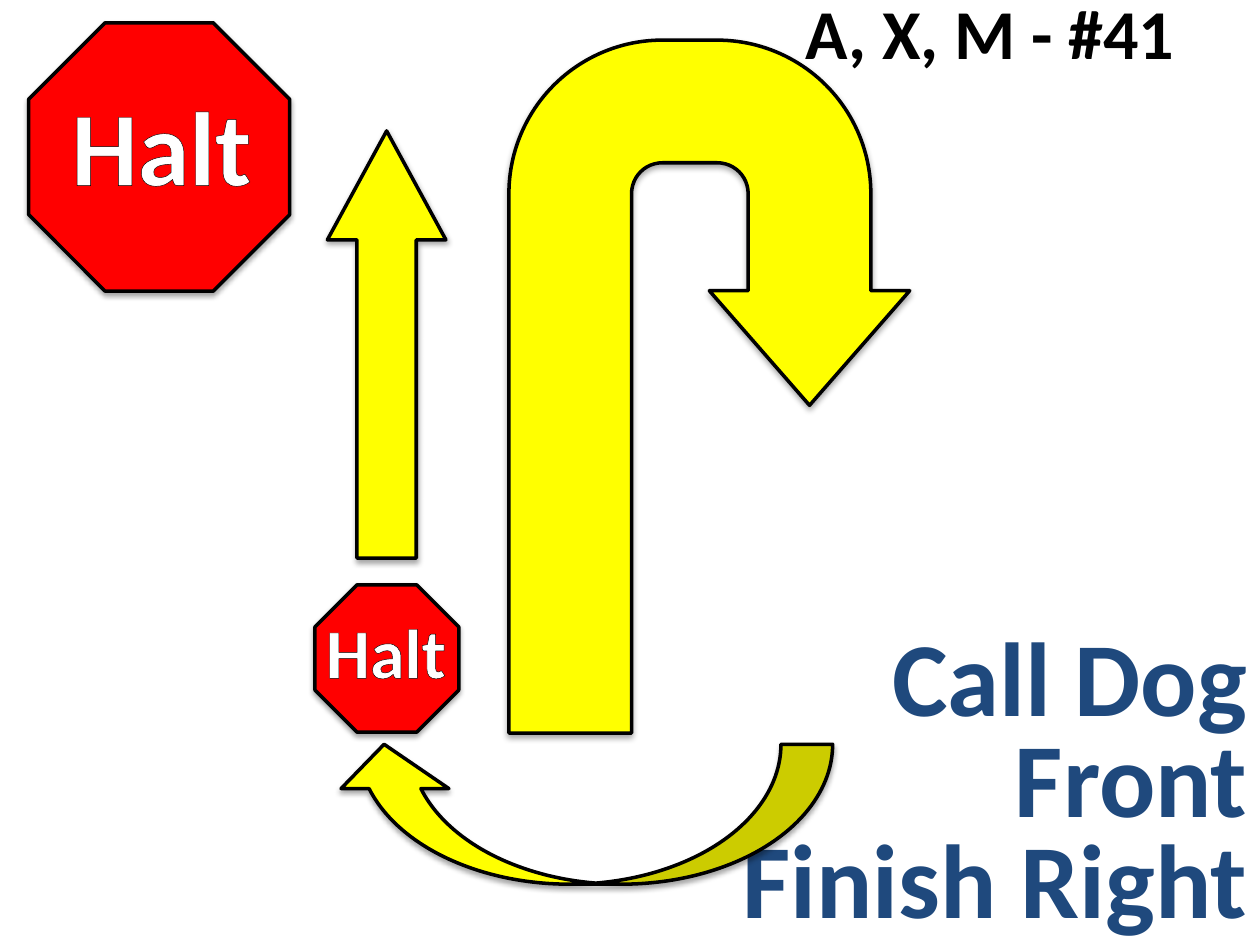
from dataclasses import dataclass

from lxml import etree
from pptx import Presentation
from pptx.dml.color import RGBColor
from pptx.enum.shapes import MSO_SHAPE
from pptx.enum.text import MSO_ANCHOR, MSO_AUTO_SIZE, PP_ALIGN
from pptx.oxml.ns import qn
from pptx.util import Cm, Pt

OCTAGON = MSO_SHAPE.OCTAGON
UP_ARROW = MSO_SHAPE.UP_ARROW
U_TURN_ARROW = MSO_SHAPE.U_TURN_ARROW
CURVED_LEFT_ARROW = MSO_SHAPE.CURVED_LEFT_ARROW
LEFT, RIGHT = PP_ALIGN.LEFT, PP_ALIGN.RIGHT
TOP = MSO_ANCHOR.TOP
GROW = MSO_AUTO_SIZE.SHAPE_TO_FIT_TEXT


@dataclass(frozen=True)
class Theme:
    font: str = "Calibri"
    large: int = 60
    small: int = 40
    black: str = "000000"
    white: str = "FFFFFF"
    yellow: str = "FFFF00"
    red: str = "FF0000"
    navy: str = "1F497D"
    line: float = 2
    text_line: float = 0.83


@dataclass(frozen=True)
class Box:
    left: float
    top: float
    width: float
    height: float

    def lengths(self) -> tuple:
        return Cm(self.left), Cm(self.top), Cm(self.width), Cm(self.height)


@dataclass(frozen=True)
class Arrow:
    kind: int
    box: Box
    adjustments: tuple
    rotation: float = 0


@dataclass(frozen=True)
class HaltSign:
    octagon: Box
    label: Box
    size: int


THEME = Theme()
TITLE_BOX = Box(14.5, 12.7, 10.9, 6.5)
TITLE_LINES = ("Call Dog", "Front", "Finish Right")
CLASS_BOX = Box(15.9, -0.33, 8.03, 1.96)
U_TURN = Arrow(U_TURN_ARROW, Box(10.26, 0.81, 8.08, 13.97), (0.306, 0.25, 0.286, 0.383, 0.527))
FORWARD = Arrow(UP_ARROW, Box(6.6, 2.64, 2.39, 8.61), (0.5, 0.919))
FINISH = Arrow(CURVED_LEFT_ARROW, Box(10.31, 11.35, 2.82, 10.13), (0.37, 0.771, 0.317), 90)
HALT_SIGNS = (
    HaltSign(Box(0.58, 0.46, 5.26, 5.41), Box(1.19, 1.5, 4.29, 2.82), THEME.large),
    HaltSign(Box(6.35, 11.79, 2.9, 2.97), Box(6.32, 12.14, 3.3, 1.96), THEME.small),
)


def add_color(parent, color: str):
    return etree.SubElement(parent, qn("a:srgbClr"), val=color)


def add_shadow(sp) -> None:
    sp.shadow.inherit = False
    effects = sp._element.spPr.find(qn("a:effectLst"))
    shadow = etree.SubElement(
        effects, qn("a:outerShdw"), blurRad=str(Pt(3.1)), dist=str(Pt(1.8)),
        dir="5400000", rotWithShape="0",
    )
    etree.SubElement(add_color(shadow, THEME.black), qn("a:alpha"), val="35000")


def add_figure(shapes, kind: int, box: Box, fill: str):
    sp = shapes.add_shape(kind, *box.lengths())
    sp.fill.solid()
    sp.fill.fore_color.rgb = RGBColor.from_string(fill)
    sp.line.color.rgb = RGBColor.from_string(THEME.black)
    sp.line.width = Pt(THEME.line)
    add_shadow(sp)
    return sp


def add_arrow(shapes, arrow: Arrow) -> None:
    sp = add_figure(shapes, arrow.kind, arrow.box, THEME.yellow)
    for i, value in enumerate(arrow.adjustments):
        sp.adjustments[i] = value
    sp.rotation = arrow.rotation


def write_text(sp, lines: tuple, size: int, color: str, align: int,
               outlined: bool = True, wrap: bool = True, spacing: float = 1.0) -> None:
    tf = sp.text_frame
    tf.word_wrap = wrap
    tf.auto_size = GROW
    tf.vertical_anchor = TOP
    for i, line in enumerate(lines):
        p = tf.add_paragraph() if i else tf.paragraphs[0]
        p.alignment = align
        p.line_spacing = spacing
        r = p.add_run()
        r.text = line
        r.font.name = THEME.font
        r.font.size = Pt(size)
        r.font.bold = True
        r.font.color.rgb = RGBColor.from_string(color)
        if outlined:
            ln = etree.Element(qn("a:ln"), w=str(Pt(THEME.text_line)))
            add_color(etree.SubElement(ln, qn("a:solidFill")), THEME.black)
            r.font._element.insert(0, ln)


def add_halt_sign(shapes, sign: HaltSign) -> None:
    group = shapes.add_group_shape()
    add_figure(group.shapes, OCTAGON, sign.octagon, THEME.red)
    label = group.shapes.add_textbox(*sign.label.lengths())
    write_text(label, ("Halt",), sign.size, THEME.white, LEFT)


def main() -> None:
    prs = Presentation()
    prs.slide_width, prs.slide_height = Cm(25.4), Cm(19.05)
    s = prs.slides.add_slide(prs.slide_layouts[5])
    title = s.shapes.title
    title.left, title.top, title.width, title.height = TITLE_BOX.lengths()
    write_text(title, TITLE_LINES, THEME.large, THEME.navy, RIGHT, spacing=0.8)

    add_arrow(s.shapes, U_TURN)
    classes = s.shapes.add_textbox(*CLASS_BOX.lengths())
    write_text(classes, ("A, X, M - #41",), THEME.small, THEME.black, RIGHT,
               outlined=False, wrap=False)
    add_arrow(s.shapes, FORWARD)
    for sign in HALT_SIGNS:
        add_halt_sign(s.shapes, sign)
    add_arrow(s.shapes, FINISH)
    prs.save("out.pptx")


if __name__ == "__main__":
    main()
